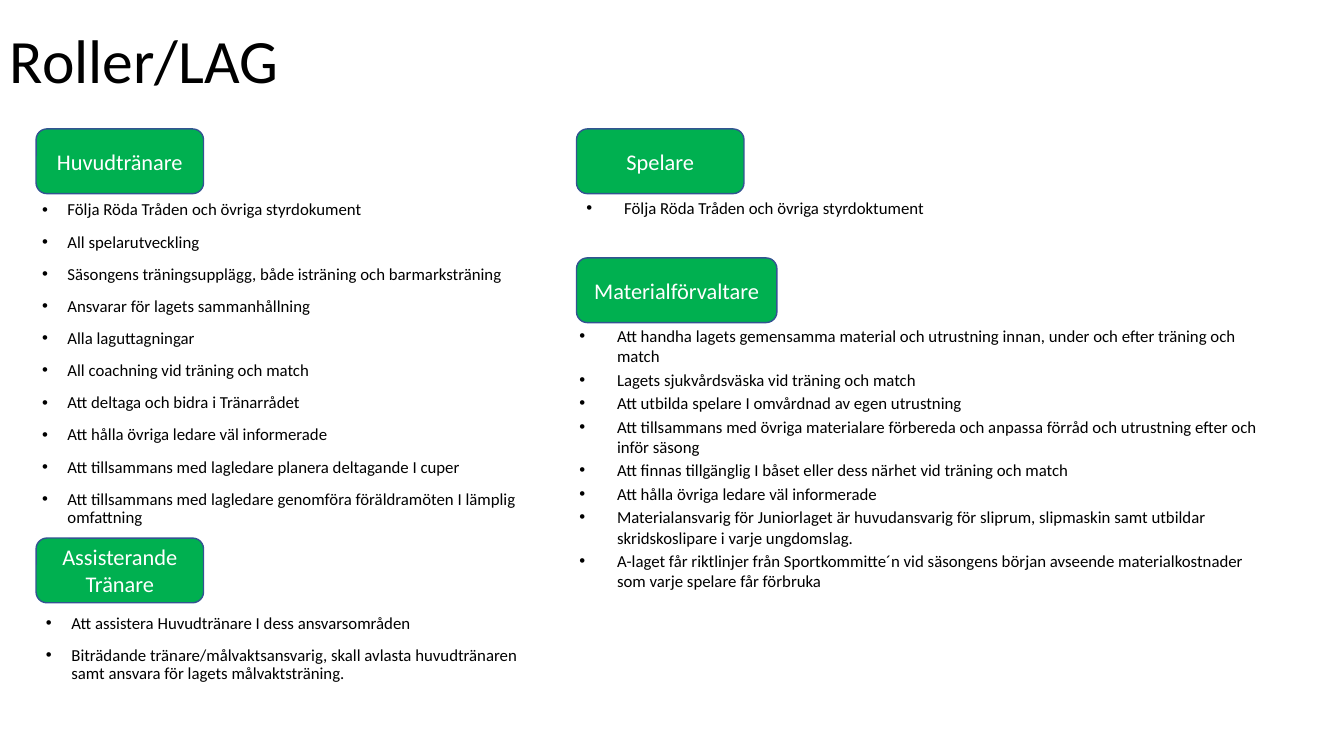
from pptx import Presentation
from pptx.dml.color import RGBColor
from pptx.enum.shapes import MSO_SHAPE
from pptx.enum.text import MSO_ANCHOR, PP_ALIGN
from pptx.oxml.ns import qn
from pptx.util import Cm, Pt
from lxml.etree import SubElement

GREEN = RGBColor(0x00, 0xB0, 0x50)
BLUE = RGBColor(0x32, 0x54, 0x91)
BLACK = RGBColor(0, 0, 0)
WHITE = RGBColor(255, 255, 255)
FONT = "Calibri"

TITLE = "Roller/LAG"

# List styles: hanging indent in cm, line spacing, space before in points
COACH_STYLE = (0.64, 0.9, 10)
TEAM_STYLE = (0.95, 1.0, 2.4)

# Lengths in cm: label (left, top, width), duties (left, top, width, height)
ROLES = [
    {"role": "Huvudtränare", "label": (0.91, 3.25, 4.22),
     "box": (0.81, 4.95, 13.0, 10.97), "style": COACH_STYLE,
     "duties": [
         "Följa Röda Tråden och övriga styrdokument",
         "All spelarutveckling",
         "Säsongens träningsupplägg, både isträning och barmarksträning",
         "Ansvarar för lagets sammanhållning",
         "Alla laguttagningar",
         "All coachning vid träning och match",
         "Att deltaga och bidra i Tränarrådet",
         "Att hålla övriga ledare väl informerade",
         "Att tillsammans med lagledare planera deltagande I cuper",
         "Att tillsammans med lagledare genomföra föräldramöten I lämplig omfattning",
     ]},
    {"role": "Assisterande Tränare", "label": (0.91, 13.56, 4.22),
     "box": (0.91, 15.37, 13.0, 3.68), "style": COACH_STYLE,
     "duties": [
         "Att assistera Huvudtränare I dess ansvarsområden",
         "Biträdande tränare/målvaktsansvarig, skall avlasta huvudtränaren "
         "samt ansvara för lagets målvaktsträning.",
     ]},
    {"role": "Spelare", "label": (14.53, 3.25, 4.22),
     "box": (14.53, 4.85, 10.92, 3.68), "style": TEAM_STYLE,
     "duties": ["Följa Röda Tråden och övriga styrdoktument"]},
    {"role": "Materialförvaltare", "label": (14.53, 6.5, 5.05),
     "box": (14.35, 8.08, 17.73, 10.97), "style": TEAM_STYLE,
     "duties": [
         "Att handha lagets gemensamma material och utrustning innan, under "
         "och efter träning och match",
         "Lagets sjukvårdsväska vid träning och match",
         "Att utbilda spelare I omvårdnad av egen utrustning",
         "Att tillsammans med övriga materialare förbereda och anpassa förråd "
         "och utrustning efter och inför säsong",
         "Att finnas tillgänglig I båset eller dess närhet vid träning och match",
         "Att hålla övriga ledare väl informerade",
         "Materialansvarig för Juniorlaget är huvudansvarig för sliprum, "
         "slipmaskin samt utbildar skridskoslipare i varje ungdomslag.",
         "A-laget får riktlinjer från Sportkommitte´n vid säsongens början "
         "avseende materialkostnader som varje spelare får förbruka",
     ]},
]
LABEL_HEIGHT = 1.63


def add_run(paragraph, text, size, color):
    run = paragraph.add_run()
    run.text = text
    run.font.name = FONT
    run.font.size = Pt(size)
    run.font.color.rgb = color


def add_text_frame(slide, left, top, width, height):
    frame = slide.shapes.add_textbox(Cm(left), Cm(top), Cm(width), Cm(height)).text_frame
    frame.word_wrap = True
    return frame


def add_title(slide):
    frame = add_text_frame(slide, 0, 0, 11.15, 3.18)
    frame.vertical_anchor = MSO_ANCHOR.MIDDLE
    heading = frame.paragraphs[0]
    heading.line_spacing = 0.9
    add_run(heading, TITLE, 44, BLACK)


def add_duties(slide, box, style, duties):
    indent, line_spacing, space_before = style
    frame = add_text_frame(slide, *box)
    for number, duty in enumerate(duties):
        item = frame.add_paragraph() if number else frame.paragraphs[0]
        properties = item._p.get_or_add_pPr()
        properties.set("marL", str(Cm(indent)))
        properties.set("indent", str(-Cm(indent)))
        SubElement(properties, qn("a:buFont")).set("typeface", "Arial")
        SubElement(properties, qn("a:buChar")).set("char", "•")
        item.line_spacing = line_spacing
        if number:
            item.space_before = Pt(space_before)
        add_run(item, duty, 12, BLACK)


def add_label(slide, left, top, width, role):
    label = slide.shapes.add_shape(MSO_SHAPE.ROUNDED_RECTANGLE,
                                   Cm(left), Cm(top), Cm(width), Cm(LABEL_HEIGHT))
    label.shadow.inherit = False
    label.fill.solid()
    label.fill.fore_color.rgb = GREEN
    label.line.color.rgb = BLUE
    label.line.width = Pt(1)
    frame = label.text_frame
    frame.word_wrap = True
    frame.vertical_anchor = MSO_ANCHOR.MIDDLE
    frame.paragraphs[0].alignment = PP_ALIGN.CENTER
    add_run(frame.paragraphs[0], role, 16, WHITE)


def main():
    deck = Presentation()
    deck.slide_width, deck.slide_height = Cm(33.87), Cm(19.05)
    slide = deck.slides.add_slide(deck.slide_layouts[6])
    add_title(slide)
    for entry in ROLES:
        add_duties(slide, entry["box"], entry["style"], entry["duties"])
        add_label(slide, *entry["label"], entry["role"])
    deck.save("out.pptx")


if __name__ == "__main__":
    main()
